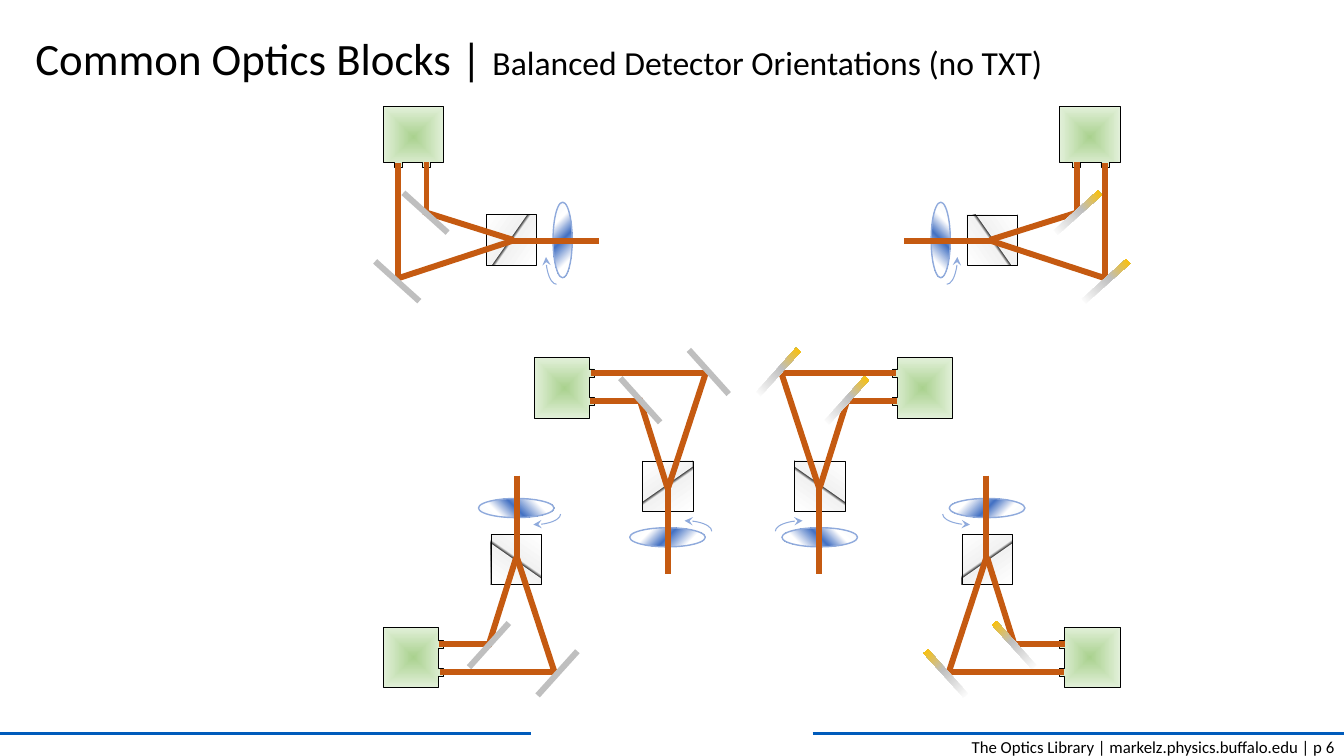
from dataclasses import dataclass
from typing import Any

from lxml import etree
from pptx import Presentation
from pptx.dml import color
from pptx.enum import shapes, text
from pptx.oxml import ns
from pptx.util import Inches, Pt

Point = tuple[float, float]
Stops = tuple[tuple[int, str], ...]


@dataclass(frozen=True)
class Theme:
    font: str = "Calibri"
    ink: str = "000000"
    rule: str = "005BBB"
    beam: str = "C55A11"
    plate_edge: str = "8FAADC"
    mirror: str = "BFBFBF"
    title_size: int = 32
    subtitle_size: int = 24
    footer_size: int = 12
    plate_stops: Stops = ((0, "F6F8FC"), (26, "FFFFFF"), (50, "4472C4"), (78, "FFFFFF"))
    prism_stops: Stops = ((0, "FFFFFF"), (48, "F2F2F2"), (52, "404040"),
                          (52, "F2F2F2"), (100, "FFFFFF"))
    gilded_stops: Stops = ((0, "FFFFFF"), (58, "BFBFBF"), (100, "FFC000"))
    detector_stops: Stops = ((0, "A9D18E"), (100, "E2F0D9"))


@dataclass(frozen=True)
class OpticsBlock:
    """A detector centre, with the block mirrored first and then turned clockwise."""
    x: float
    y: float
    turn: int
    mirrored: bool
    gilded: bool
    reach: float  # how far the incoming beam starts from the detector centre

    def place(self, point: Point) -> Point:
        px, py = point
        if self.mirrored:
            px = -px
        for _ in range(self.turn // 90):
            px, py = -py, px
        return self.x + px, self.y + py

    def angle(self, base: int) -> int:
        return ((-base if self.mirrored else base) + self.turn) % 360


THEME = Theme()
BLOCKS = [
    OpticsBlock(4.10, 1.36, 90, False, False, 1.84),
    OpticsBlock(4.10, 6.52, 0, False, False, 1.80),
    OpticsBlock(10.81, 6.52, 0, True, True, 1.80),
    OpticsBlock(10.81, 1.36, 270, True, True, 1.84),
    OpticsBlock(5.60, 3.85, 180, True, False, 1.84),
    OpticsBlock(9.15, 3.85, 180, False, True, 1.84),
]

# Places within a block, measured from the detector centre
PLATE, PRISM, ARC = (1.02, -1.48), (1.02, -0.97), (1.19, -1.42)
MIRRORS = [(0.75, -0.12), (1.43, 0.16)]
SPLIT_BEAMS = [((1.41, 0.18), (1.03, -0.98)), ((1.02, -0.99), (0.74, -0.1))]
PORT_BEAMS = [((0.25, -0.13), (0.78, -0.13)), ((1.44, 0.15), (0.26, 0.15))]
PORTS = [(-0.17, -0.09), (0.11, 0.19)]
EDGE, FACE, PORT_TIP = 0.3, 0.25, 0.3
DETECTOR = [(-EDGE, -EDGE), (FACE, -EDGE),
            *((x, y) for top, bottom in PORTS
              for x, y in ((FACE, top), (PORT_TIP, top), (PORT_TIP, bottom), (FACE, bottom))),
            (FACE, EDGE), (-EDGE, EDGE)]

prs = Presentation()
prs.slide_width, prs.slide_height = Inches(13.33), Inches(7.5)
slide = prs.slides.add_slide(prs.slide_layouts[5])


def rgb(value: str) -> color.RGBColor:
    return color.RGBColor.from_string(value)


def apply(target: Any, values: dict[str, Any]) -> None:
    for name, value in values.items():
        setattr(target, name, value)


def stroke(shape: Any, ink: str, width: float) -> None:
    shape.line.color.rgb = rgb(ink)
    shape.line.width = Pt(width)


def add_gradient(shape: Any, stops: Stops, angle: int | None = None) -> None:
    """Fill along an angle, or outwards from the centre when none is given."""
    gradient = etree.Element(ns.qn("a:gradFill"), rotWithShape="1")
    stop_list = etree.SubElement(gradient, ns.qn("a:gsLst"))
    for position, value in stops:
        stop = etree.SubElement(stop_list, ns.qn("a:gs"), pos=str(position * 1000))
        etree.SubElement(stop, ns.qn("a:srgbClr"), val=value)
    if angle is None:
        centre = etree.SubElement(gradient, ns.qn("a:path"), path="rect")
        etree.SubElement(centre, ns.qn("a:fillToRect"),
                         {side: "50000" for side in "ltrb"})
    else:
        etree.SubElement(gradient, ns.qn("a:lin"), ang=str(angle * 60000), scaled="0")
    properties = shape._element.spPr
    geometry = properties.find(ns.qn("a:prstGeom"))
    if geometry is None:
        geometry = properties.find(ns.qn("a:custGeom"))
    geometry.addnext(gradient)


def add_part(kind: shapes.MSO_SHAPE, centre: Point, width: float, height: float,
             rotation: int) -> Any:
    x, y = centre
    part = slide.shapes.add_shape(kind, Inches(x - width / 2), Inches(y - height / 2),
                                  Inches(width), Inches(height))
    part.rotation = rotation
    part.shadow.inherit = False
    return part


def add_line(start: Point, end: Point, ink: str, width: float) -> None:
    line = slide.shapes.add_connector(shapes.MSO_CONNECTOR.STRAIGHT,
                                      *(Inches(v) for v in (*start, *end)))
    stroke(line, ink, width)
    etree.SubElement(line._element.spPr, ns.qn("a:effectLst"))


def add_beam(block: OpticsBlock, start: Point, end: Point) -> None:
    add_line(block.place(start), block.place(end), THEME.beam, 4.25)


def add_detector(block: OpticsBlock) -> None:
    corners = [tuple(Inches(v) for v in block.place(corner)) for corner in DETECTOR]
    outline = slide.shapes.build_freeform(*corners[0])
    outline.add_line_segments(corners[1:], close=True)
    detector = outline.convert_to_shape()
    detector.shadow.inherit = False
    add_gradient(detector, THEME.detector_stops)
    stroke(detector, THEME.ink, 0.5)


def add_mirror(block: OpticsBlock, centre: Point) -> None:
    # The right-hand end always points upwards, so gilding sits on top
    mirror = add_part(shapes.MSO_SHAPE.RECTANGLE, block.place(centre), 0.59, 0.06,
                      180 + block.angle(132) % 180)
    if block.gilded:
        add_gradient(mirror, THEME.gilded_stops, 0)
    else:
        mirror.fill.solid()
        mirror.fill.fore_color.rgb = rgb(THEME.mirror)
    mirror.line.fill.background()


def add_turn_arrow(block: OpticsBlock) -> None:
    arrow = add_part(shapes.MSO_SHAPE.ARC, block.place(ARC), 0.21, 0.54, block.angle(90))
    if block.mirrored:
        arrow._element.spPr.find(ns.qn("a:xfrm")).set("flipH", "1")
    arrow.fill.background()
    stroke(arrow, THEME.plate_edge, 0.75)
    etree.SubElement(arrow.line._get_or_add_ln(), ns.qn("a:tailEnd"), type="stealth")


def add_block(block: OpticsBlock) -> None:
    plate = add_part(shapes.MSO_SHAPE.OVAL, block.place(PLATE), 0.19, 0.75, block.angle(90))
    add_gradient(plate, THEME.plate_stops, 315 if block.mirrored else 225)
    stroke(plate, THEME.plate_edge, 1)
    prism = add_part(shapes.MSO_SHAPE.RECTANGLE, block.place(PRISM), 0.5, 0.5, block.turn)
    add_gradient(prism, THEME.prism_stops, 55 if block.mirrored else 125)
    stroke(prism, THEME.ink, 0.25)
    for start, end in SPLIT_BEAMS:
        add_beam(block, start, end)
    add_detector(block)
    for (start, end), mirror in zip(PORT_BEAMS, MIRRORS):
        add_beam(block, start, end)
        add_mirror(block, mirror)
    add_turn_arrow(block)
    add_beam(block, (1.03, -block.reach), (1.03, -0.96))


def write(holder: Any, runs: list[tuple[str, int]], align: text.PP_ALIGN,
          frame_format: dict[str, Any]) -> None:
    apply(holder.text_frame, frame_format)
    line = holder.text_frame.paragraphs[0]
    line.alignment = align
    for words, size in runs:
        run = line.add_run()
        run.text = words
        apply(run.font, {"name": THEME.font, "size": Pt(size)})
        run.font.color.rgb = rgb(THEME.ink)


# Footer and its rules
footer = slide.shapes.add_textbox(Inches(9.38), Inches(7.26), Inches(3.96), Inches(0.3))
write(footer, [("The Optics Library | markelz.physics.buffalo.edu | p 6", THEME.footer_size)],
      text.PP_ALIGN.RIGHT, {"word_wrap": False})
for rule_left, rule_right in ((0, 5.27), (8.06, 13.33)):
    add_line((rule_left, 7.28), (rule_right, 7.28), THEME.rule, 2.25)

# Title
title = slide.shapes.title
apply(title, {"left": Inches(0.25), "top": Inches(0.25),
              "width": Inches(10.29), "height": Inches(0.64)})
write(title, [("Common Optics Blocks | ", THEME.title_size),
              ("Balanced Detector Orientations (no TXT)", THEME.subtitle_size)],
      text.PP_ALIGN.LEFT, {"word_wrap": True, "auto_size": text.MSO_AUTO_SIZE.NONE,
                           "vertical_anchor": text.MSO_ANCHOR.TOP})

# Detector blocks
for optics_block in BLOCKS:
    add_block(optics_block)

prs.save("out.pptx")
